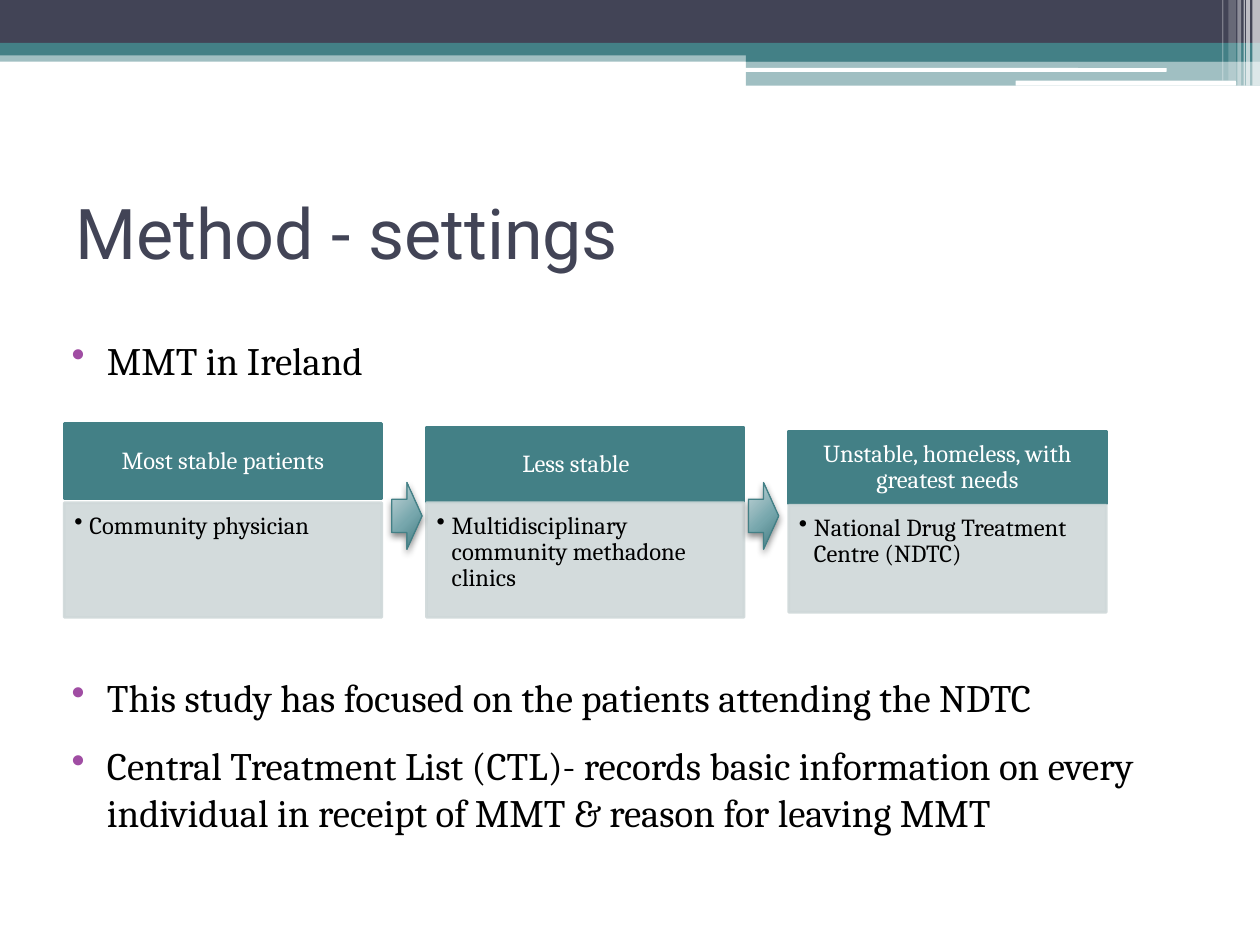
from lxml import etree
from pptx import Presentation
from pptx.dml.color import RGBColor
from pptx.enum.shapes import MSO_SHAPE
from pptx.enum.text import MSO_ANCHOR, PP_ALIGN
from pptx.oxml import parse_xml
from pptx.oxml.ns import nsdecls, qn
from pptx.util import Inches, Pt

RECTANGLE = MSO_SHAPE.RECTANGLE
ROUNDED = MSO_SHAPE.ROUNDED_RECTANGLE
RIGHT_ARROW = MSO_SHAPE.RIGHT_ARROW
TOP, MIDDLE = MSO_ANCHOR.TOP, MSO_ANCHOR.MIDDLE
LEFT, CENTER = PP_ALIGN.LEFT, PP_ALIGN.CENTER

COLORS = {
    "white": "FFFFFF", "black": "000000", "navy": "424456", "teal": "438086",
    "panel": "CFD8D9", "bullet": "A04DA3",
    "arrow_light": "C7D7DA", "arrow_mid": "77A7AD", "arrow_dark": "3E777D",
}

# shape, left, top, width, height, colour, opacity in percent
BANNER = [
    (RECTANGLE, 0, 0.4, 10, 0.09, "teal", 50),
    (RECTANGLE, 0, 0, 10, 0.34, "navy", 100),
    (RECTANGLE, 0, 0.34, 10, 0.1, "teal", 100),
    (RECTANGLE, 5.92, 0.39, 4.08, 0.1, "teal", 100),
    (RECTANGLE, 5.92, 0.48, 4.08, 0.2, "teal", 50),
    (ROUNDED, 5.91, 0.54, 3.35, 0.03, "white", 100),
    (ROUNDED, 8.06, 0.64, 1.75, 0.04, "white", 100),
]
# left, width, height, opacity in percent
STRIPES = [
    (9.94, 0.06, 0.68, 65), (9.89, 0.03, 0.68, 65), (9.87, 0.01, 0.68, 60),
    (9.82, 0.03, 0.68, 40), (9.75, 0.06, 0.64, 20), (9.7, 0.01, 0.64, 30),
]
# heading, description, heading top and height, description top and height
CARDS = [
    ("Most stable patients", "Community physician", 3.36, 0.6, 3.99, 0.91),
    ("Less stable\t", "Multidisciplinary community methadone clinics",
     3.39, 0.6, 3.99, 0.91),
    ("Unstable, homeless, with greatest needs",
     "National Drug Treatment Centre (NDTC)", 3.42, 0.58, 4.01, 0.85),
]
CARD_LEFT, CARD_STEP, CARD_WIDTH = 0.51, 2.875, 2.52
ARROW_LEFTS = [3.11, 5.94]

HEADING_FRAME = {"margin_left": Inches(0.11), "margin_top": Inches(0.06),
                 "margin_right": Inches(0.11), "margin_bottom": Inches(0.06),
                 "vertical_anchor": MIDDLE}
DETAIL_FRAME = {"margin_left": Inches(0.08), "margin_top": Inches(0.08),
                "margin_right": Inches(0.11), "margin_bottom": Inches(0.12),
                "vertical_anchor": TOP}


def rgb(name):
    return RGBColor.from_string(COLORS[name])


def set_opacity(fill_parent, opacity):
    color = fill_parent.find(qn("a:solidFill"))[0]
    etree.SubElement(color, qn("a:alpha"), val=str(opacity * 1000))


def add_block(slide, kind, left, top, width, height, color, opacity=100, line_width=0):
    shape = slide.shapes.add_shape(
        kind, Inches(left), Inches(top), Inches(width), Inches(height))
    shape.shadow.inherit = False
    shape.fill.solid()
    shape.fill.fore_color.rgb = rgb(color)
    if line_width:
        shape.line.color.rgb = rgb(color)
        shape.line.width = Pt(line_width)
    else:
        shape.line.fill.background()
    if opacity < 100:
        set_opacity(shape._element.spPr, opacity)
        if line_width:
            set_opacity(shape._element.spPr.find(qn("a:ln")), opacity)
    return shape


def add_bullet(paragraph, indent, hanging, color):
    properties = paragraph._p.get_or_add_pPr()
    properties.set("marL", str(Inches(indent)))
    properties.set("indent", str(-Inches(hanging)))
    bullet_color = etree.SubElement(properties, qn("a:buClr"))
    etree.SubElement(bullet_color, qn("a:srgbClr"), val=COLORS[color])
    etree.SubElement(properties, qn("a:buChar"), char="•")


def write(paragraph, text, size, color, font="Cambria", **settings):
    for name, value in settings.items():
        setattr(paragraph, name, value)
    run = paragraph.add_run()
    run.text = text
    run.font.name = font
    run.font.size = Pt(size)
    run.font.color.rgb = rgb(color)


def format_frame(shape, settings):
    frame = shape.text_frame
    frame.word_wrap = True
    for name, value in settings.items():
        setattr(frame, name, value)
    return frame


def add_text_box(slide, left, top, width, height, anchor):
    box = slide.shapes.add_textbox(
        Inches(left), Inches(top), Inches(width), Inches(height))
    return format_frame(box, {"vertical_anchor": anchor})


def add_title(slide, text):
    frame = add_text_box(slide, 0.5, 1.25, 9, 1.17, MIDDLE)
    write(frame.paragraphs[0], text, 40, "navy", "Roboto")


def add_bullet_list(slide, top, height, items):
    frame = add_text_box(slide, 0.35, top, 9.15, height, TOP)
    for index, item in enumerate(items):
        paragraph = frame.add_paragraph() if index else frame.paragraphs[0]
        write(paragraph, item, 22.2, "black", space_after=Pt(12))
        add_bullet(paragraph, 0.4, 0.28, "bullet")


def add_card(slide, left, heading, detail, heading_top, heading_height,
             detail_top, detail_height):
    header = add_block(slide, RECTANGLE, left, heading_top, CARD_WIDTH,
                       heading_height, "teal", line_width=1.5)
    frame = format_frame(header, HEADING_FRAME)
    write(frame.paragraphs[0], heading, 14, "white",
          alignment=CENTER, line_spacing=0.9)
    panel = add_block(slide, RECTANGLE, left, detail_top, CARD_WIDTH,
                      detail_height, "panel", 90, 1.5)
    frame = format_frame(panel, DETAIL_FRAME)
    write(frame.paragraphs[0], detail, 14, "black",
          alignment=LEFT, line_spacing=0.9)
    add_bullet(frame.paragraphs[0], 0.12, 0.12, "black")


def add_arrow(slide, left):
    """Add a block arrow with a radial gradient and a soft shadow below."""
    arrow = add_block(slide, RIGHT_ARROW, left, 3.83, 0.24, 0.53, "teal")
    arrow.line.color.rgb = rgb("teal")
    arrow.line.width = Pt(0.75)
    stops = "".join(
        f'<a:gs pos="{position * 1000}"><a:srgbClr val="{COLORS[name]}"/></a:gs>'
        for position, name in ((0, "arrow_light"), (55, "arrow_mid"), (100, "arrow_dark")))
    gradient = parse_xml(
        f'<a:gradFill {nsdecls("a")} rotWithShape="1"><a:gsLst>{stops}</a:gsLst>'
        '<a:path path="circle"><a:fillToRect l="-40000" t="-90000" r="140000" '
        'b="190000"/></a:path></a:gradFill>')
    properties = arrow._element.spPr
    properties.replace(properties.find(qn("a:solidFill")), gradient)
    properties.find(qn("a:effectLst")).append(parse_xml(
        f'<a:outerShdw {nsdecls("a")} blurRad="{Pt(4)}" dist="{Pt(2)}" dir="5400000">'
        f'<a:srgbClr val="{COLORS["black"]}"><a:alpha val="45000"/></a:srgbClr>'
        '</a:outerShdw>'))


def main():
    presentation = Presentation()
    presentation.slide_width = Inches(10)
    presentation.slide_height = Inches(7.5)
    slide = presentation.slides.add_slide(presentation.slide_layouts[6])
    for band in BANNER:
        add_block(slide, *band)
    for left, width, height, opacity in STRIPES:
        add_block(slide, RECTANGLE, left, 0, width, height, "white", opacity)
    add_title(slide, "Method - settings")
    add_bullet_list(slide, 2.62, 0.5, ["MMT in Ireland"])
    add_bullet_list(slide, 5.3, 1.5, [
        "This study has focused on the patients attending the NDTC",
        "Central Treatment List (CTL)- records basic information on every "
        "individual in receipt of MMT & reason for leaving MMT",
    ])
    for index, card in enumerate(CARDS):
        add_card(slide, CARD_LEFT + index * CARD_STEP, *card)
    for left in ARROW_LEFTS:
        add_arrow(slide, left)
    presentation.save("out.pptx")


if __name__ == "__main__":
    main()
